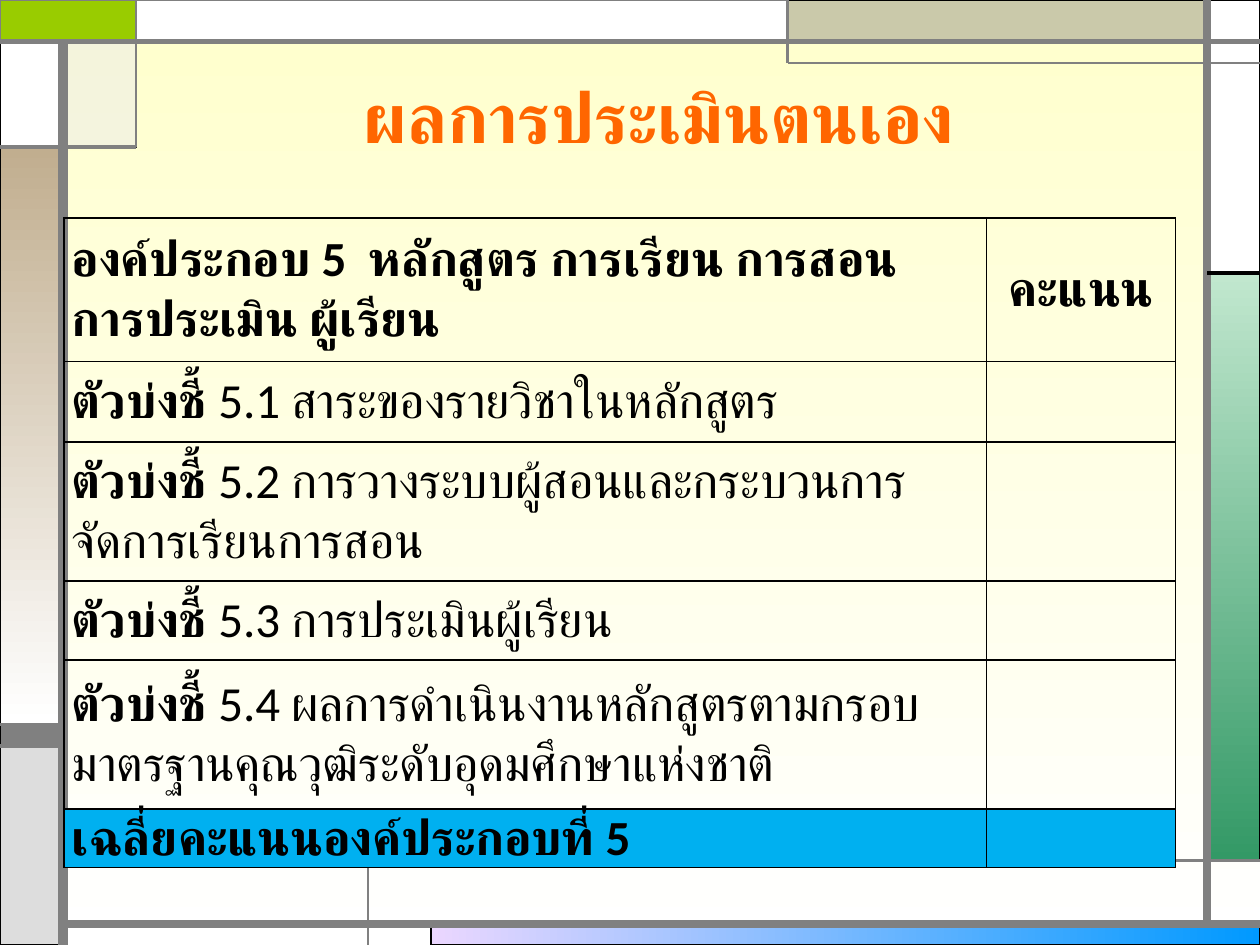
from lxml.etree import SubElement
from pptx import Presentation
from pptx.dml.color import RGBColor
from pptx.enum.shapes import MSO_CONNECTOR, MSO_SHAPE
from pptx.enum.text import MSO_ANCHOR, PP_ALIGN
from pptx.oxml.ns import qn
from pptx.util import Inches, Pt

FONT = "Calibri"
BLACK = RGBColor(0x00, 0x00, 0x00)
WHITE = RGBColor(0xFF, 0xFF, 0xFF)
GRAY = RGBColor(0x80, 0x80, 0x80)
SILVER = RGBColor(0xDD, 0xDD, 0xDD)
MIST = RGBColor(0xEA, 0xEA, 0xEA)
KHAKI = RGBColor(0xCA, 0xC9, 0xAA)
TAN = RGBColor(0xC1, 0xAE, 0x8F)
LIME = RGBColor(0x99, 0xCC, 0x00)
MINT = RGBColor(0xC1, 0xE7, 0xCE)
GREEN = RGBColor(0x33, 0x99, 0x66)
LILAC = RGBColor(0xEB, 0xD7, 0xFF)
BLUE = RGBColor(0x00, 0x99, 0xFF)
SKY = RGBColor(0x00, 0xB0, 0xF0)
CREAM = RGBColor(0xFF, 0xFF, 0xCC)
ORANGE = RGBColor(0xFF, 0x66, 0x00)

TITLE = "ผลการประเมินตนเอง"
INDICATOR = "ตัวบ่งชี้ "
HEADER = ("องค์ประกอบ 5  หลักสูตร การเรียน การสอน การประเมิน ผู้เรียน", "คะแนน")
INDICATORS = [
    "5.1 สาระของรายวิชาในหลักสูตร",
    "5.2 การวางระบบผู้สอนและกระบวนการ จัดการเรียนการสอน",
    "5.3 การประเมินผู้เรียน",
    "5.4 ผลการดำเนินงานหลักสูตรตามกรอบมาตรฐานคุณวุฒิระดับอุดมศึกษาแห่งชาติ",
]
AVERAGE = "เฉลี่ยคะแนนองค์ประกอบที่ 5"
COLUMN_WIDTHS = [7.32, 1.5]
ROW_HEIGHTS = [1.14, 0.64, 1.1, 0.63, 1.18, 0.38]

# Guides of the frame, in inches
WIDTH, HEIGHT = 10, 7.5
LEFT, TAB, STEM, FOOT, BAND, RIGHT = 0.5, 1.08, 2.92, 3.42, 6.25, 9.58
TOP, SHELF, CORNER, SIDE = 0.33, 0.5, 1.17, 2.17
NOTCH, BLOCK, LEDGE, BOTTOM = 5.75, 5.92, 6.83, 7.33

# Left, top, right, bottom, fill (start, end, angle for a gradient)
PANELS = [
    (FOOT, BOTTOM, WIDTH, HEIGHT, (LILAC, BLUE, 0)),
    (RIGHT, SIDE, WIDTH, LEDGE, (MINT, GREEN, 90)),
    (0, NOTCH, LEFT, BLOCK, GRAY),
    (0, BLOCK, LEFT, HEIGHT, SILVER),
    (RIGHT, 0, WIDTH, SIDE, WHITE),
    (BAND, 0, RIGHT, TOP, KHAKI),
    (LEFT, TOP, TAB, CORNER, MIST),
    (0, CORNER, LEFT, NOTCH, (TAN, WHITE, 90)),
    (0, TOP, LEFT, CORNER, WHITE),
    (0, 0, TAB, TOP, LIME),
    (TAB, 0, BAND, TOP, WHITE),
]
PANEL_LINES = {LIME: (GRAY, 1.5), MIST: (BLACK, 0.75)}
TOP_GAP_LINE = (GRAY, 0.75)

# From x, from y, to x, to y, width in points, colour
RULES = [
    (LEFT, HEIGHT, LEFT, TOP, 6, GRAY),
    (LEFT, BOTTOM, WIDTH, BOTTOM, 4.5, GRAY),
    (RIGHT, BOTTOM, RIGHT, 0, 4.5, GRAY),
    (0, TOP, WIDTH, TOP, 3, GRAY),
    (WIDTH, SHELF, BAND, SHELF, 1.5, GRAY),
    (BAND, SHELF, BAND, 0, 1.5, GRAY),
    (RIGHT, SIDE, WIDTH, SIDE, 2.25, BLACK),
    (TAB, 0, TAB, CORNER, 1.5, GRAY),
    (TAB, CORNER, 0, CORNER, 2.25, GRAY),
    (STEM, HEIGHT, STEM, LEDGE, 1.5, GRAY),
    (STEM, LEDGE, WIDTH, LEDGE, 1.5, GRAY),
    (LEFT, NOTCH, 0, NOTCH, 2.25, GRAY),
    (LEFT, BLOCK, 0, BLOCK, 2.25, GRAY),
]


def set_gradient(fill, start, end, angle):
    """Fill from start to end; the angle runs clockwise."""
    fill.gradient()
    fill.gradient_angle = (360 - angle) % 360
    for stop, color in zip(fill.gradient_stops, (start, end)):
        stop.color.rgb = color


def add_panel(slide, left, top, right, bottom, paint):
    panel = slide.shapes.add_shape(
        MSO_SHAPE.RECTANGLE, Inches(left), Inches(top),
        Inches(right - left), Inches(bottom - top))
    panel.shadow.inherit = False
    if isinstance(paint, RGBColor):
        panel.fill.solid()
        panel.fill.fore_color.rgb = paint
    else:
        set_gradient(panel.fill, *paint)
    if paint == MIST:
        color = panel.fill._xPr.find(".//" + qn("a:srgbClr"))
        SubElement(color, qn("a:alpha"), val="50000")
    line = TOP_GAP_LINE if left == TAB else PANEL_LINES.get(paint, (BLACK, 0.75))
    panel.line.color.rgb = line[0]
    panel.line.width = Pt(line[1])


def add_rule(slide, x1, y1, x2, y2, width, color):
    rule = slide.shapes.add_connector(
        MSO_CONNECTOR.STRAIGHT, *(Inches(v) for v in (x1, y1, x2, y2)))
    rule.line.color.rgb = color
    rule.line.width = Pt(width)
    SubElement(rule._element.spPr, qn("a:effectLst"))


def write(paragraph, text, size=28, color=BLACK, bold=True, align=PP_ALIGN.LEFT):
    paragraph.alignment = align
    run = paragraph.add_run()
    run.text = text
    run.font.name = FONT
    run.font.size = Pt(size)
    run.font.bold = bold
    run.font.color.rgb = color
    # Thai letters take the complex-script font
    SubElement(run.font._element, qn("a:cs"), typeface=FONT)


def format_cell(cell, color=None):
    cell.margin_left = cell.margin_right = Inches(0.06)
    cell.margin_top = cell.margin_bottom = 0
    cell.vertical_anchor = MSO_ANCHOR.MIDDLE
    properties = cell._tc.get_or_add_tcPr()
    for side in ("lnL", "lnR", "lnT", "lnB"):
        border = SubElement(properties, qn("a:" + side), w=str(Pt(1)))
        paint = SubElement(border, qn("a:solidFill"))
        SubElement(paint, qn("a:srgbClr"), val=str(BLACK))
    if color is None:
        cell.fill.background()
    else:
        cell.fill.solid()
        cell.fill.fore_color.rgb = color


def add_scores(slide):
    scores = slide.shapes.add_table(
        len(ROW_HEIGHTS), len(COLUMN_WIDTHS), Inches(0.51), Inches(1.73),
        Inches(sum(COLUMN_WIDTHS)), Inches(sum(ROW_HEIGHTS))).table
    scores.first_row = scores.horz_banding = False
    for column, width in zip(scores.columns, COLUMN_WIDTHS):
        column.width = Inches(width)
    last = len(ROW_HEIGHTS) - 1
    for index, (row, height) in enumerate(zip(scores.rows, ROW_HEIGHTS)):
        row.height = Inches(height)
        for cell in row.cells:
            format_cell(cell, SKY if index == last else None)

    def paragraph(row, column=0):
        return scores.cell(row, column).text_frame.paragraphs[0]

    write(paragraph(0), HEADER[0])
    write(paragraph(0, 1), HEADER[1], align=PP_ALIGN.CENTER)
    for index, indicator in enumerate(INDICATORS, start=1):
        write(paragraph(index), INDICATOR)
        write(paragraph(index), indicator, bold=False)
    write(paragraph(last), AVERAGE)
    scores.cell(last, 0).vertical_anchor = MSO_ANCHOR.TOP


def main():
    deck = Presentation()
    deck.slide_width, deck.slide_height = Inches(WIDTH), Inches(HEIGHT)
    slide = deck.slides.add_slide(deck.slide_layouts[6])
    set_gradient(slide.background.fill, CREAM, WHITE, 90)
    for panel in PANELS:
        add_panel(slide, *panel)
    for rule in RULES:
        add_rule(slide, *rule)
    title = slide.shapes.add_textbox(
        Inches(0.98), Inches(0.29), Inches(8.5), Inches(1.25)).text_frame
    title.word_wrap = True
    title.vertical_anchor = MSO_ANCHOR.MIDDLE
    write(title.paragraphs[0], TITLE, size=40, color=ORANGE, align=PP_ALIGN.CENTER)
    add_scores(slide)
    deck.save("out.pptx")


if __name__ == "__main__":
    main()
